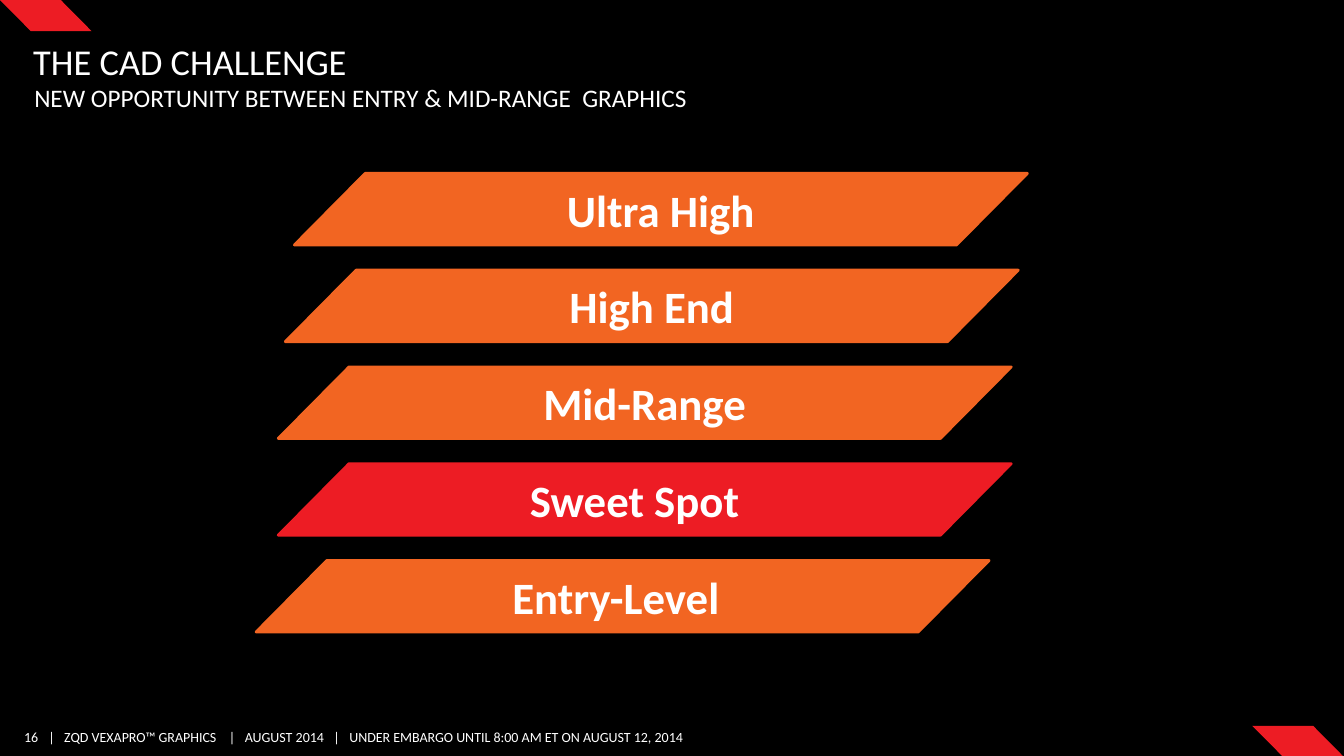
from pptx import Presentation
from pptx.dml.color import RGBColor
from pptx.enum.shapes import MSO_SHAPE
from pptx.enum.text import MSO_ANCHOR, PP_ALIGN
from pptx.util import Inches, Pt

PARALLELOGRAM = MSO_SHAPE.PARALLELOGRAM
TOP, MIDDLE, BOTTOM = MSO_ANCHOR.TOP, MSO_ANCHOR.MIDDLE, MSO_ANCHOR.BOTTOM
LEFT, CENTER, RIGHT = PP_ALIGN.LEFT, PP_ALIGN.CENTER, PP_ALIGN.RIGHT
BLACK, WHITE, ORANGE, RED = "000000", "FFFFFF", "F26522", "ED1C24"


def color(hex_value):
    return RGBColor.from_string(hex_value)


def write(shape, text, size, align, anchor, bold=False):
    frame = shape.text_frame
    frame.vertical_anchor = anchor
    para = frame.paragraphs[0]
    para.text = text
    para.alignment = align
    para.font.name = "Calibri"
    para.font.size = Pt(size)
    para.font.bold = bold
    para.font.color.rgb = color(WHITE)


deck = Presentation()
deck.slide_width = Inches(13.33)
deck.slide_height = Inches(7.5)
page = deck.slides.add_slide(deck.slide_layouts[6])
page.background.fill.solid()
page.background.fill.fore_color.rgb = color(BLACK)

for left, top in [(0, 0), (12.42, 7.2)]:
    corner = page.shapes.add_shape(
        PARALLELOGRAM, Inches(left), Inches(top), Inches(0.91), Inches(0.31))
    corner.shadow.inherit = False
    corner.adjustments[0] = 0.99
    corner.fill.solid()
    corner.fill.fore_color.rgb = color(RED)
    corner.line.fill.background()
    corner._element.spPr.xfrm.set("flipH", "1")

tiers = [
    ("Ultra High", 2.92, ORANGE, 0.1),
    ("High End", 2.83, ORANGE, 0.1),
    ("Mid-Range", 2.76, ORANGE, 0.1),
    ("Sweet Spot", 2.76, RED, 0.3),
    ("Entry-Level", 2.54, ORANGE, 0.23),
]
for row, (label, left, tint, right_inset) in enumerate(tiers):
    tier = page.shapes.add_shape(
        PARALLELOGRAM, Inches(left), Inches(1.72 + 0.96 * row),
        Inches(7.27), Inches(0.71))
    tier.shadow.inherit = False
    tier.adjustments[0] = 0.99
    tier.fill.solid()
    tier.fill.fore_color.rgb = color(tint)
    tier.line.color.rgb = color(tint)
    tier.line.width = Pt(2)
    tier.text_frame.margin_right = Inches(right_inset)
    write(tier, label, 32, CENTER, MIDDLE, bold=True)

footer = ("|   ZQD VEXAPRO™ GRAPHICS    |   AUGUST 2014   |   "
          "UNDER EMBARGO UNTIL 8:00 AM ET ON AUGUST 12, 2014")
captions = [
    ("THE CAD CHALLENGE", 0.33, 0.3, 11.4, 0.52, 26, LEFT, BOTTOM, True),
    ("NEW OPPORTUNITY BETWEEN ENTRY & MID-RANGE  GRAPHICS",
     0.34, 0.82, 11.4, 0.31, 18, LEFT, TOP, True),
    ("16", 0.22, 7.18, 0.16, 0.26, 10, RIGHT, MIDDLE, False),
    (footer, 0.48, 7.18, 6.37, 0.26, 10, LEFT, MIDDLE, False),
]
for text, left, top, width, height, size, align, anchor, wrap in captions:
    box = page.shapes.add_textbox(
        Inches(left), Inches(top), Inches(width), Inches(height))
    frame = box.text_frame
    frame.word_wrap = wrap
    frame.margin_left = frame.margin_right = 0
    frame.margin_top = frame.margin_bottom = 0
    write(box, text, size, align, anchor)

deck.save("out.pptx")
